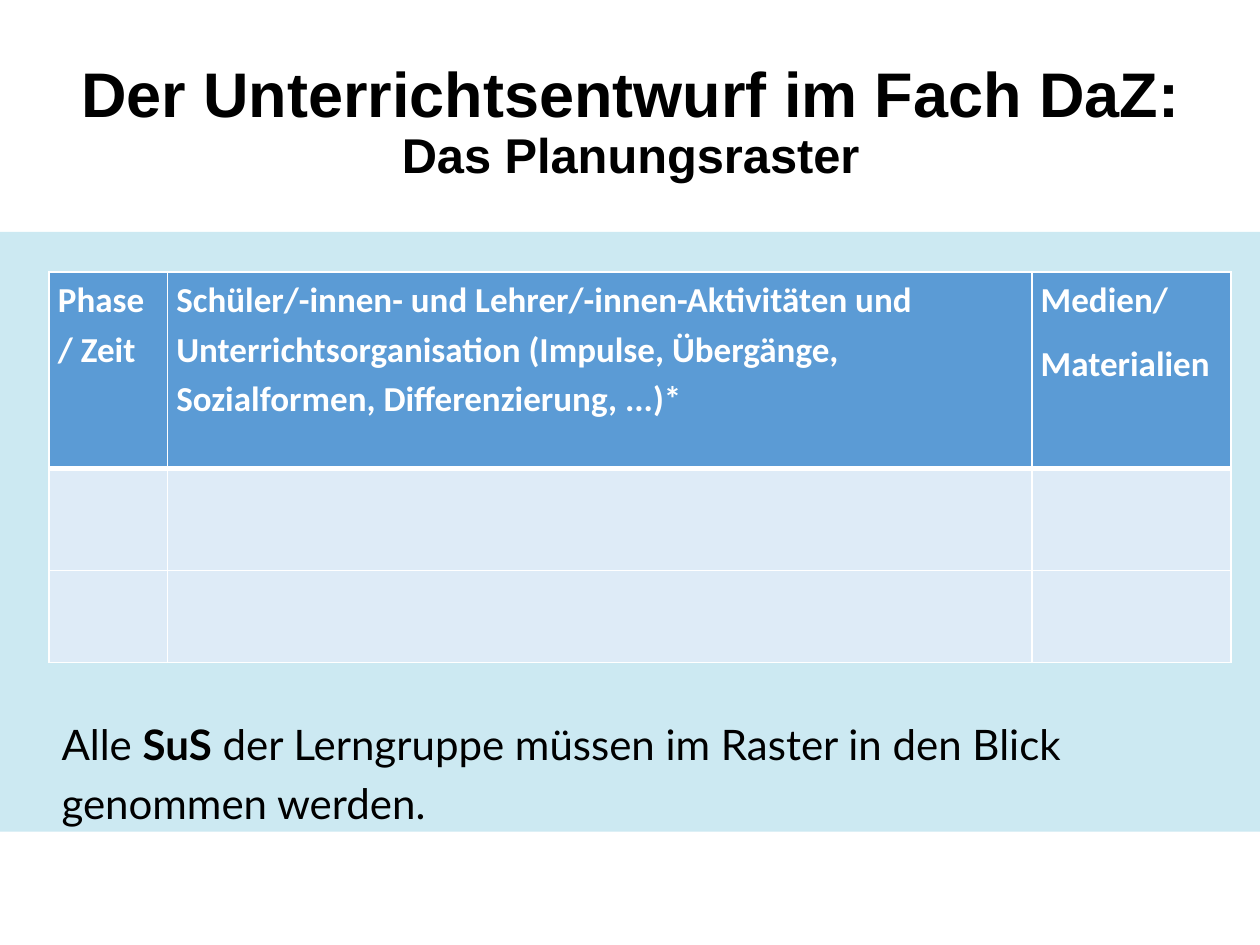
from dataclasses import dataclass

from lxml.etree import SubElement
from pptx import Presentation
from pptx.dml.color import RGBColor
from pptx.enum.shapes import MSO_SHAPE as Shape
from pptx.enum.text import MSO_ANCHOR as Anchor, MSO_AUTO_SIZE as AutoSize, PP_ALIGN as Align
from pptx.oxml.ns import qn
from pptx.util import Inches, Pt

WHITE, BLACK = "FFFFFF", "000000"
BAND, HEADER, BODY = "CCE9F2", "5B9BD5", "DEEBF7"


@dataclass
class Column:
    width: float
    lines: list[str]


COLUMNS = [
    Column(0.94, ["Phase/ Zeit"]),
    Column(6.86, ["Schüler/-innen- und Lehrer/-innen-Aktivitäten und Unterrichtsorganisation "
                  "(Impulse, Übergänge, Sozialformen, Differenzierung, ...)*"]),
    Column(1.58, ["Medien/", "Materialien"]),
]
ROW_HEIGHTS = [1.56, 0.81, 0.73]


def color(value: str) -> RGBColor:
    return RGBColor.from_string(value)


def add_text(para, text: str, *, size: float, font: str, fill: str = BLACK, bold: bool = False) -> None:
    span = para.add_run()
    span.text = text
    span.font.size = Pt(size)
    span.font.name = font
    span.font.bold = bold
    span.font.color.rgb = color(fill)


def space_body(para) -> None:
    para.line_spacing = 1.16
    para.space_after = Pt(8)


def set_borders(cell, bottom: float) -> None:
    properties = cell._tc.get_or_add_tcPr()
    for side, width in (("L", 1), ("R", 1), ("T", 1), ("B", bottom)):
        line = SubElement(properties, qn(f"a:ln{side}"), w=str(Pt(width)))
        fill = SubElement(line, qn("a:solidFill"))
        SubElement(fill, qn("a:srgbClr"), val=WHITE)


def format_cell(cell, fill: str, bottom: float) -> None:
    set_borders(cell, bottom)
    cell.fill.solid()
    cell.fill.fore_color.rgb = color(fill)
    cell.margin_left = cell.margin_right = Inches(0.07)
    cell.margin_top = cell.margin_bottom = 0


def fill_header(cell, lines: list[str]) -> None:
    for index, text in enumerate(lines):
        para = cell.text_frame.add_paragraph() if index else cell.text_frame.paragraphs[0]
        space_body(para)
        add_text(para, text, size=20, font="Calibri", fill=WHITE, bold=True)


def add_title(page) -> None:
    title = page.shapes.title
    title.left, title.top = Inches(0.35), Inches(0.25)
    title.width, title.height = Inches(9.31), Inches(1.46)
    frame = title.text_frame
    frame.auto_size = AutoSize.NONE
    frame.word_wrap = True
    frame.vertical_anchor = Anchor.MIDDLE
    para = frame.paragraphs[0]
    para.alignment = Align.CENTER
    para.line_spacing = 0.9
    add_text(para, "Der Unterrichtsentwurf im Fach DaZ:", size=36, font="Arial", bold=True)
    para.add_line_break()
    add_text(para, "Das Planungsraster", size=27.9, font="Arial", bold=True)


def add_band(page) -> None:
    band = page.shapes.add_shape(Shape.RECTANGLE, 0, Inches(1.84), Inches(10), Inches(4.76))
    band.shadow.inherit = False
    band.fill.solid()
    band.fill.fore_color.rgb = color(BAND)
    band.line.fill.background()


def add_grid(page) -> None:
    grid = page.shapes.add_table(len(ROW_HEIGHTS), len(COLUMNS), Inches(0.39), Inches(2.16),
                                 Inches(9.38), Inches(sum(ROW_HEIGHTS))).table
    for row, height in zip(grid.rows, ROW_HEIGHTS):
        row.height = Inches(height)
    for index, column in enumerate(COLUMNS):
        grid.columns[index].width = Inches(column.width)
        for row in range(len(ROW_HEIGHTS)):
            is_header = row == 0
            format_cell(grid.cell(row, index), HEADER if is_header else BODY, 3 if is_header else 1)
        fill_header(grid.cell(0, index), column.lines)


def add_note(page) -> None:
    box = page.shapes.add_textbox(Inches(0.39), Inches(5.59), Inches(9.38), Inches(1.01))
    frame = box.text_frame
    frame.word_wrap = True
    frame.auto_size = AutoSize.SHAPE_TO_FIT_TEXT
    para = frame.paragraphs[0]
    space_body(para)
    for text, bold in (("Alle ", False), ("SuS", True),
                       (" der Lerngruppe müssen im Raster in den Blick genommen werden.", False)):
        add_text(para, text, size=24, font="Lato", bold=bold)


def main() -> None:
    deck = Presentation()
    deck.slide_width, deck.slide_height = Inches(10), Inches(7.5)
    page = deck.slides.add_slide(deck.slide_layouts[5])
    add_band(page)
    add_title(page)
    add_grid(page)
    add_note(page)
    deck.save("out.pptx")


if __name__ == "__main__":
    main()
